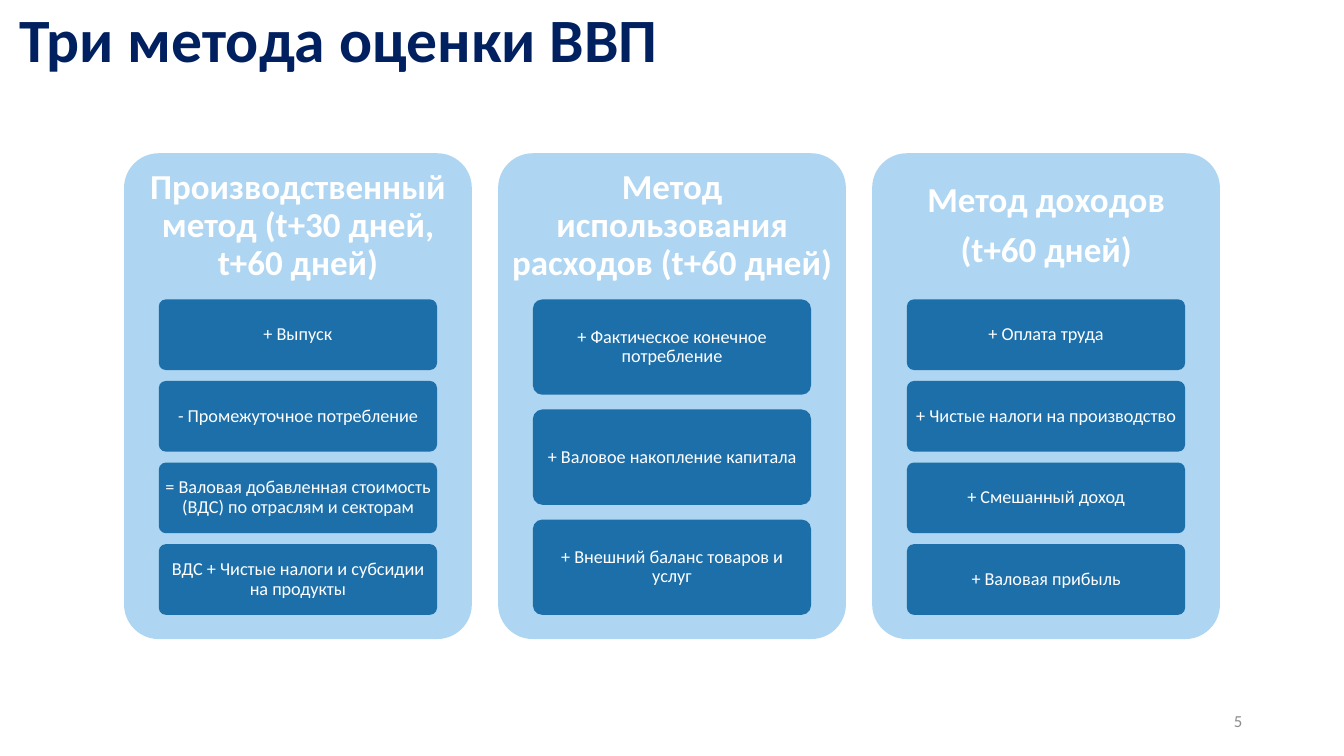
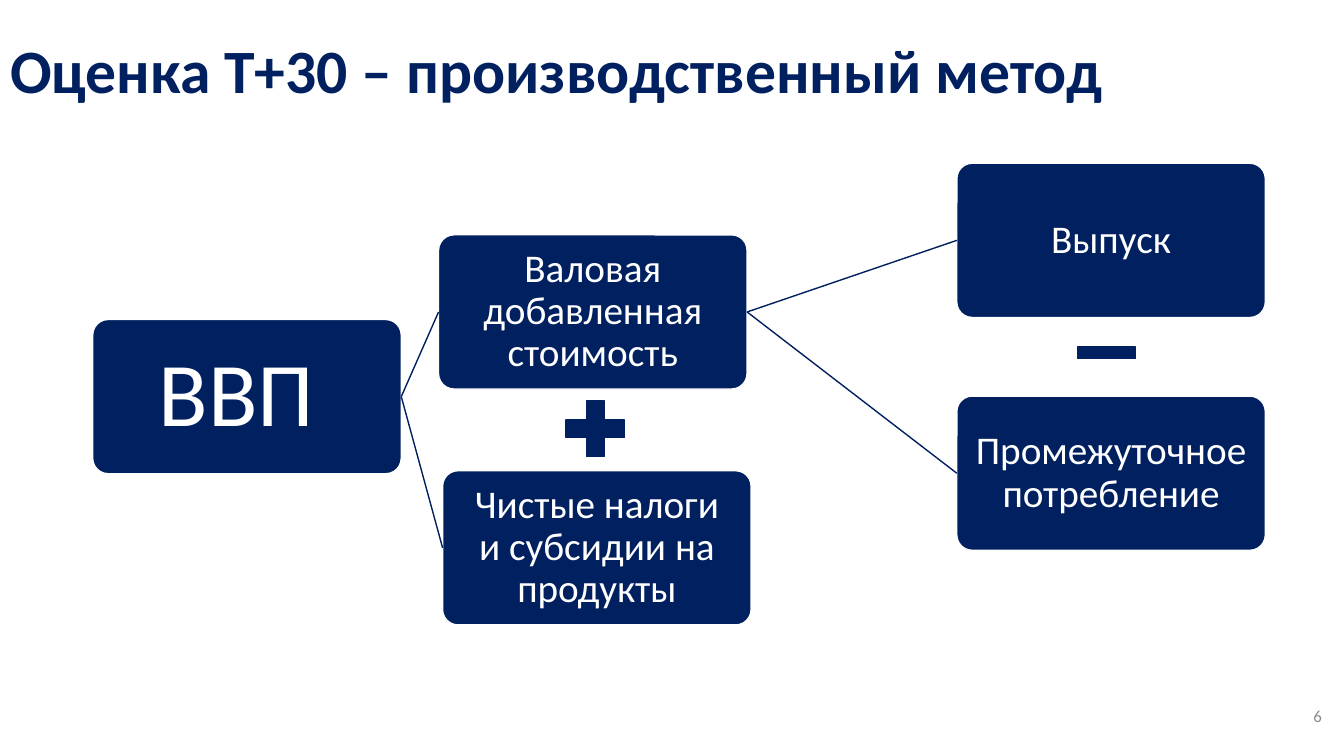
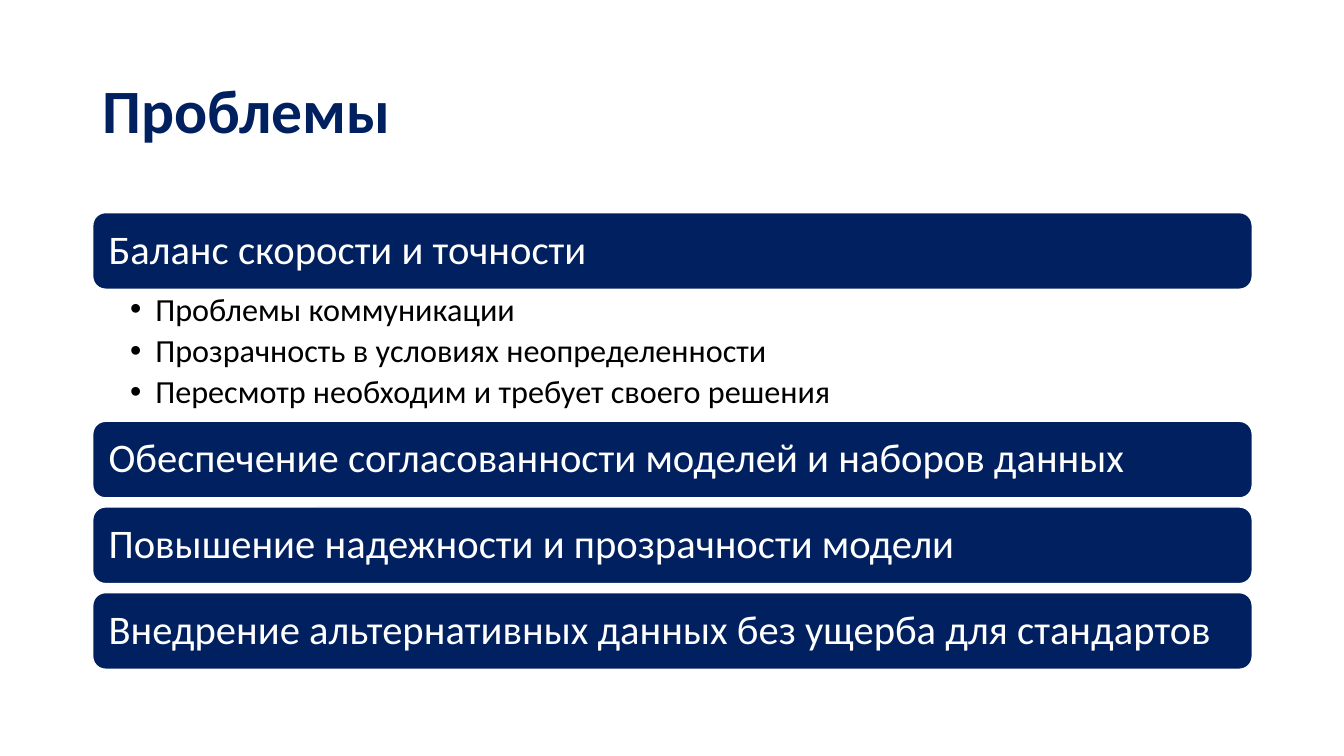
from lxml import etree
from pptx import Presentation
from pptx.dml.color import RGBColor
from pptx.enum.shapes import MSO_CONNECTOR, MSO_SHAPE as Preset
from pptx.enum.text import MSO_ANCHOR as Anchor, MSO_AUTO_SIZE, PP_ALIGN as Align
from pptx.oxml.ns import qn
from pptx.util import Inches, Pt

FONT = "Calibri"
NAVY = "002060"
BLUE = "1D6FA9"
PALE_BLUE = "5FADE4"
WHITE = "FFFFFF"
GREY = "8C8C8C"
BLACK = "000000"
LEFT_SIDE, RIGHT_SIDE = 1, 3

METHODS = [
    (["Производственный метод (t+30 дней, t+60 дней)"],
     ["+ Выпуск",
      "- Промежуточное потребление",
      "= Валовая добавленная стоимость (ВДС) по отраслям и секторам",
      "ВДС + Чистые налоги и субсидии на продукты"]),
    (["Метод использования расходов (t+60 дней)"],
     ["+ Фактическое конечное потребление",
      "+ Валовое накопление капитала",
      "+ Внешний баланс товаров и услуг"]),
    (["Метод доходов", "(t+60 дней)"],
     ["+ Оплата труда",
      "+ Чистые налоги на производство",
      "+ Смешанный доход",
      "+ Валовая прибыль"]),
]
COMMUNICATION_POINTS = [
    "Проблемы коммуникации",
    "Прозрачность в условиях неопределенности",
    "Пересмотр необходим и требует своего решения",
]
CHALLENGES = [
    (2.11, "Баланс скорости и точности"),
    (4.18, "Обеспечение согласованности моделей и наборов данных"),
    (5.03, "Повышение надежности и прозрачности модели"),
    (5.88, "Внедрение альтернативных данных без ущерба для стандартов"),
]


def rgb(code):
    return RGBColor.from_string(code)


def write(box, lines, size, color=WHITE, bold=False, align=Align.CENTER,
          anchor=Anchor.MIDDLE, insets=(0.1, 0.05, 0.1, 0.05), spacing=0.9,
          after=0.35, bullet_indent=None):
    """Fill a shape with paragraphs; `after` is a share of the text size."""
    frame = box.text_frame
    frame.word_wrap = True
    frame.auto_size = MSO_AUTO_SIZE.NONE
    frame.vertical_anchor = anchor
    (frame.margin_left, frame.margin_top,
     frame.margin_right, frame.margin_bottom) = map(Inches, insets)
    for index, line in enumerate(lines):
        para = frame.add_paragraph() if index else frame.paragraphs[0]
        if bullet_indent:
            properties = para._p.get_or_add_pPr()
            properties.set("marL", str(Inches(bullet_indent)))
            properties.set("indent", str(-Inches(bullet_indent)))
            etree.SubElement(properties, qn("a:buChar")).set("char", "•")
        para.alignment = align
        para.line_spacing = spacing
        para.space_before = Pt(0)
        para.space_after = Pt(round(size * after, 2))
        span = para.add_run()
        span.text = line
        span.font.name = FONT
        span.font.size = Pt(size)
        span.font.bold = bold
        span.font.color.rgb = rgb(color)


def place(box, left, top, width, height):
    box.left, box.top = Inches(left), Inches(top)
    box.width, box.height = Inches(width), Inches(height)


def add_page(deck, layout, title, area):
    page = deck.slides.add_slide(deck.slide_layouts.get_by_name(layout))
    place(page.shapes.title, *area)
    write(page.shapes.title, [title], 44, NAVY, bold=True, align=Align.LEFT, after=0)
    return page


def add_text(page, area, lines, size, **text_format):
    box = page.shapes.add_textbox(*map(Inches, area))
    write(box, lines, size, **text_format)


def add_page_number(page, number, left, top):
    add_text(page, (left, top, 3, 0.4), [str(number)], 12, color=GREY,
             align=Align.RIGHT, spacing=1, after=0)


def add_block(page, preset, area, fill, line=None, corner=None, alpha=None):
    """Add a flat preset shape; `alpha` is its opacity in percent."""
    block = page.shapes.add_shape(preset, *map(Inches, area))
    block.shadow.inherit = False
    block.fill.solid()
    block.fill.fore_color.rgb = rgb(fill)
    if corner is not None:
        block.adjustments[0] = corner
    if alpha is not None:
        color = block._element.spPr.find(".//" + qn("a:srgbClr"))
        etree.SubElement(color, qn("a:alpha")).set("val", str(alpha * 1000))
    if line:
        block.line.color.rgb = rgb(line)
        block.line.width = Pt(1)
    else:
        block.line.fill.background()
    return block


def link(page, start, end):
    """Join the right side of one block to the left side of another."""
    line = page.shapes.add_connector(MSO_CONNECTOR.STRAIGHT, 0, 0, 0, 0)
    line.begin_connect(start, RIGHT_SIDE)
    line.end_connect(end, LEFT_SIDE)
    line.line.color.rgb = rgb(NAVY)
    line.line.width = Pt(1)
    etree.SubElement(line._element.spPr, qn("a:effectLst"))


def add_method_card(page, left, heading, items):
    top, width = 1.52, 3.45
    item_left, item_top, item_width, items_height = left + 0.345, 2.97, 2.76, 3.13
    gap_share = 0.154
    add_block(page, Preset.ROUNDED_RECTANGLE, (left, top, width, 4.82),
              PALE_BLUE, corner=0.1, alpha=50)
    add_text(page, (left, top, width, 1.45), heading, 25, bold=True,
             insets=(0.1, 0.1, 0.1, 0.1))
    height = items_height / (len(items) + gap_share * (len(items) - 1))
    for index, item in enumerate(items):
        area = (item_left, item_top + index * height * (1 + gap_share),
                item_width, height)
        block = add_block(page, Preset.ROUNDED_RECTANGLE, area, BLUE, corner=0.1)
        write(block, [item], 13, insets=(0.04, 0.03, 0.04, 0.03))


def add_node(page, left, top, text, size=28, inset=0.15):
    node = add_block(page, Preset.ROUNDED_RECTANGLE, (left, top, 3.06, 1.53),
                     NAVY, line=WHITE, corner=0.1)
    write(node, [text], size, insets=(inset,) * 4)
    return node


def build_methods(deck):
    page = add_page(deck, "Title Only", "Три метода оценки ВВП",
                    (0.09, 0.03, 8.17, 0.79))
    add_page_number(page, 5, 9.42, 6.95)
    for index, (heading, items) in enumerate(METHODS):
        add_method_card(page, 1.23 + index * 3.71, heading, items)


def build_production_tree(deck):
    page = add_page(deck, "Title Only", "Оценка T+30 – производственный метод",
                    (0, 0, 11.5, 1.45))
    gdp = add_node(page, 0.92, 3.17, "ВВП ", size=65)
    value_added = add_node(page, 4.35, 2.33, "Валовая добавленная стоимость")
    net_taxes = add_node(page, 4.39, 4.67, "Чистые налоги и субсидии на продукты")
    output = add_node(page, 9.49, 1.62, "Выпуск", inset=0.02)
    consumption = add_node(page, 9.49, 3.93, "Промежуточное потребление", inset=0.02)
    for start, end in [(gdp, value_added), (gdp, net_taxes),
                       (value_added, output), (value_added, consumption)]:
        link(page, start, end)
    add_block(page, Preset.MATH_PLUS, (5.51, 3.88, 0.79, 0.75), NAVY, line=NAVY)
    add_block(page, Preset.MATH_MINUS, (10.58, 3.25, 0.79, 0.5), NAVY, line=NAVY)
    add_page_number(page, 6, 10.21, 6.9)


def build_challenges(deck):
    left, width = 0.92, 11.5
    page = add_page(deck, "Title and Content", "Проблемы", (left, 0.4, width, 1.45))
    body = page.placeholders[1]
    place(body, left, 2.87, width, 1.31)
    write(body, COMMUNICATION_POINTS, 23, BLACK, align=Align.LEFT, anchor=Anchor.TOP,
          insets=(0.37, 0.04, 0.23, 0.04), after=0.2, bullet_indent=0.25)
    for top, text in CHALLENGES:
        band = add_block(page, Preset.ROUNDED_RECTANGLE, (left, top, width, 0.76),
                         NAVY, line=WHITE)
        write(band, [text], 29, align=Align.LEFT, insets=(0.12,) * 4)


def main():
    deck = Presentation()
    deck.slide_width, deck.slide_height = Inches(13.33), Inches(7.5)
    build_methods(deck)
    build_production_tree(deck)
    build_challenges(deck)
    deck.save("out.pptx")


if __name__ == "__main__":
    main()
